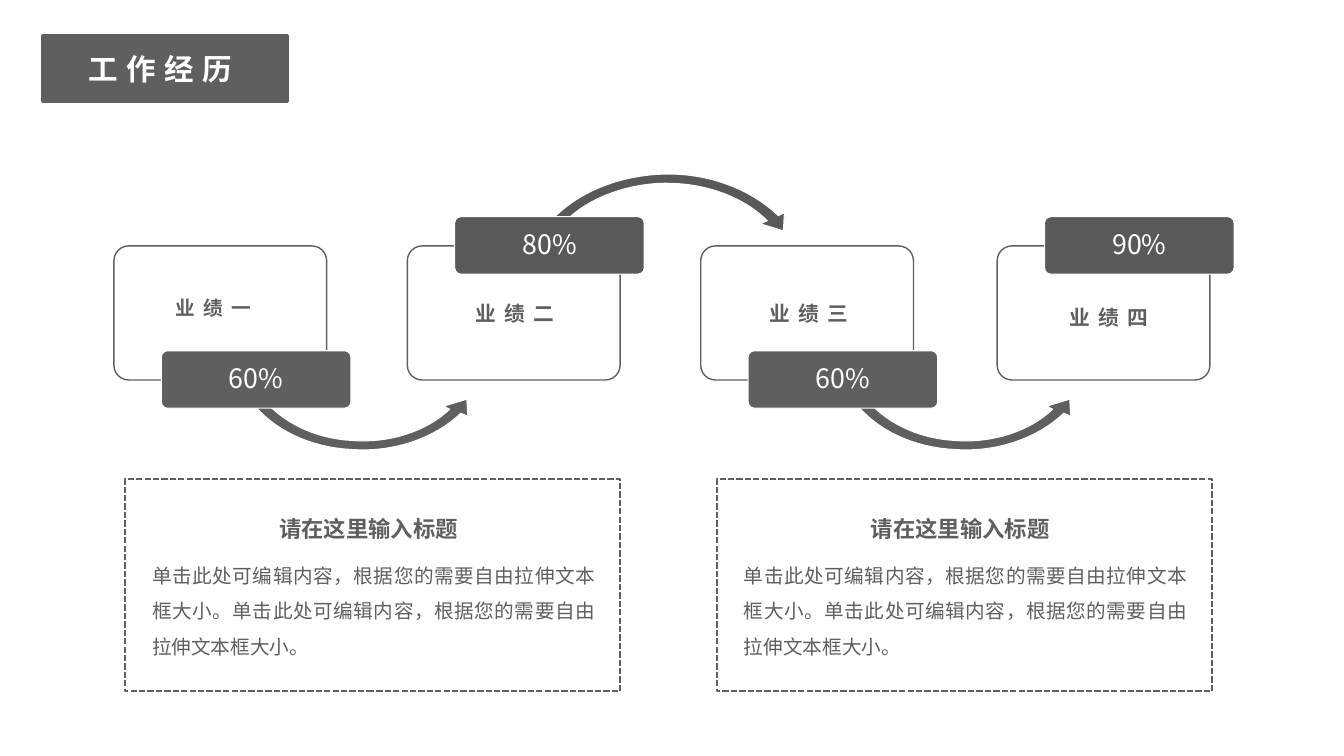
from pptx import Presentation
from pptx.dml.color import RGBColor
from pptx.enum.dml import MSO_LINE
from pptx.enum.shapes import MSO_SHAPE
from pptx.enum.text import MSO_ANCHOR, MSO_AUTO_SIZE, PP_ALIGN
from pptx.oxml.ns import qn
from pptx.util import Inches, Pt
from lxml.etree import SubElement

GRAY = RGBColor(0x5F, 0x5F, 0x5F)
DARK = RGBColor(0x59, 0x59, 0x59)
WHITE = RGBColor(0xFF, 0xFF, 0xFF)
FONT = "Noto Sans CJK SC"
STEPS = 16

LOWER = [
    (2.49, 3.98), (2.59, 3.93),
    (2.78, 4.18, 3.11, 4.35, 3.49, 4.37),
    (3.86, 4.4, 4.23, 4.28, 4.46, 4.06),
    (4.4, 4.03), (4.63, 3.96), (4.64, 4.13), (4.57, 4.1),
    (4.31, 4.35, 3.9, 4.49, 3.49, 4.46),
    (3.07, 4.44, 2.7, 4.26, 2.49, 3.98),
]
UPPER = [
    (5.4, 2.27),
    (5.63, 1.96, 6.05, 1.76, 6.52, 1.73),
    (6.98, 1.7, 7.43, 1.86, 7.72, 2.14),
    (7.78, 2.11), (7.77, 2.29), (7.54, 2.22), (7.61, 2.19),
    (7.35, 1.93, 6.94, 1.8, 6.52, 1.82),
    (6.09, 1.85, 5.71, 2.03, 5.51, 2.31),
]
CARDS = [
    (1.13, "业绩一", 14, 1.64, 2.89, "60%", 3.48, GRAY),
    (4.04, "业绩二", 14.8, 4.62, 2.93, "80%", 2.15, DARK),
    (6.95, "业绩三", 14.8, 7.53, 2.93, "60%", 3.48, GRAY),
    (9.89, "业绩四", 14.8, 10.51, 2.97, "90%", 2.15, DARK),
]
HEAD = "请在这里输入标题"
BODY = "单击此处可编辑内容，根据您的需要自由拉伸文本框大小。" * 2


def write(frame, text, size, color, bold=False, gap=0, align=PP_ALIGN.LEFT, pitch=1.0):
    frame.text = text
    frame.word_wrap = True
    para = frame.paragraphs[0]
    para.alignment = align
    para.line_spacing = pitch
    run = para.runs[0]
    font = run.font
    font.size = Pt(size)
    font.bold = bold
    font.name = FONT
    font.color.rgb = color
    props = font._element
    if gap:
        props.set("spc", str(gap * 100))
    SubElement(props, qn("a:ea")).set("typeface", FONT)


def add_text(slide, box, text, size, **style):
    label = slide.shapes.add_textbox(*map(Inches, box))
    write(label.text_frame, text, size, GRAY, **style)


def paint(shape, fill, line, width):
    shape.shadow.inherit = False
    if fill is None:
        shape.fill.background()
    else:
        shape.fill.solid()
        shape.fill.fore_color.rgb = fill
    shape.line.color.rgb = line
    shape.line.width = Pt(width)


def add_box(slide, kind, box, fill, line, width):
    shape = slide.shapes.add_shape(kind, *map(Inches, box))
    paint(shape, fill, line, width)
    if kind == MSO_SHAPE.ROUNDED_RECTANGLE:
        shape.adjustments[0] = 0.11
    return shape


def trace(outline):
    points = [outline[0]]
    for part in outline[1:]:
        if len(part) == 2:
            points.append(part)
            continue
        knots = [points[-1], part[:2], part[2:4], part[4:]]
        for step in range(1, STEPS + 1):
            t = step / STEPS
            u = 1 - t
            ratios = (u ** 3, 3 * u * u * t, 3 * u * t * t, t ** 3)
            points.append(tuple(
                sum(r * k[axis] for r, k in zip(ratios, knots)) for axis in (0, 1)))
    return points


def add_arrow(slide, outline, fill, shift=0):
    points = [(Inches(x + shift), Inches(y)) for x, y in trace(outline)]
    build = slide.shapes.build_freeform(*points[0])
    build.add_line_segments(points[1:], close=True)
    paint(build.convert_to_shape(), fill, WHITE, 0.75)


def add_card(slide, left, name, size, x, y, rate, top, color):
    round_box = MSO_SHAPE.ROUNDED_RECTANGLE
    add_box(slide, round_box, (left, 2.44, 2.11, 1.33), None, GRAY, 1)
    tag = add_box(slide, round_box, (left + 0.47, top, 1.88, 0.57), color, WHITE, 0.75)
    tag.text_frame.vertical_anchor = MSO_ANCHOR.MIDDLE
    write(tag.text_frame, rate, 19.1, WHITE, align=PP_ALIGN.CENTER, pitch=0.9)
    add_text(slide, (x, y, 1.4, 0.35), name, size, bold=True, gap=6)


def add_note(slide, left):
    frame = add_box(slide, MSO_SHAPE.RECTANGLE, (left, 4.75, 4.91, 2.11), None, GRAY, 1.5)
    frame.line.dash_style = MSO_LINE.SQUARE_DOT
    add_text(slide, (left + 0.88, 5.06, 3.07, 0.37), HEAD, 16,
             bold=True, align=PP_ALIGN.CENTER)
    add_text(slide, (left + 0.17, 5.43, 4.59, 1.16), BODY, 14,
             align=PP_ALIGN.JUSTIFY, pitch=1.5)


def set_title(slide, text):
    title = slide.shapes.title
    title.left, title.top, title.width, title.height = map(Inches, (0.42, 0.35, 2.43, 0.66))
    title.fill.solid()
    title.fill.fore_color.rgb = GRAY
    title.line.color.rgb = GRAY
    title.line.width = Pt(2.25)
    frame = title.text_frame
    write(frame, text, 21.1, WHITE, bold=True, gap=6)
    frame.auto_size = MSO_AUTO_SIZE.NONE
    frame.vertical_anchor = MSO_ANCHOR.MIDDLE
    frame.margin_left = Inches(0.46)
    frame.margin_right = 0


def main():
    deck = Presentation()
    deck.slide_width = Inches(13.33)
    deck.slide_height = Inches(7.5)
    slide = deck.slides.add_slide(deck.slide_layouts[5])
    set_title(slide, "工作经历")
    add_arrow(slide, LOWER, GRAY)
    add_arrow(slide, LOWER, GRAY, 5.98)
    add_arrow(slide, UPPER, DARK)
    for card in CARDS:
        add_card(slide, *card)
    for left in (1.24, 7.11):
        add_note(slide, left)
    deck.save("out.pptx")


if __name__ == "__main__":
    main()
